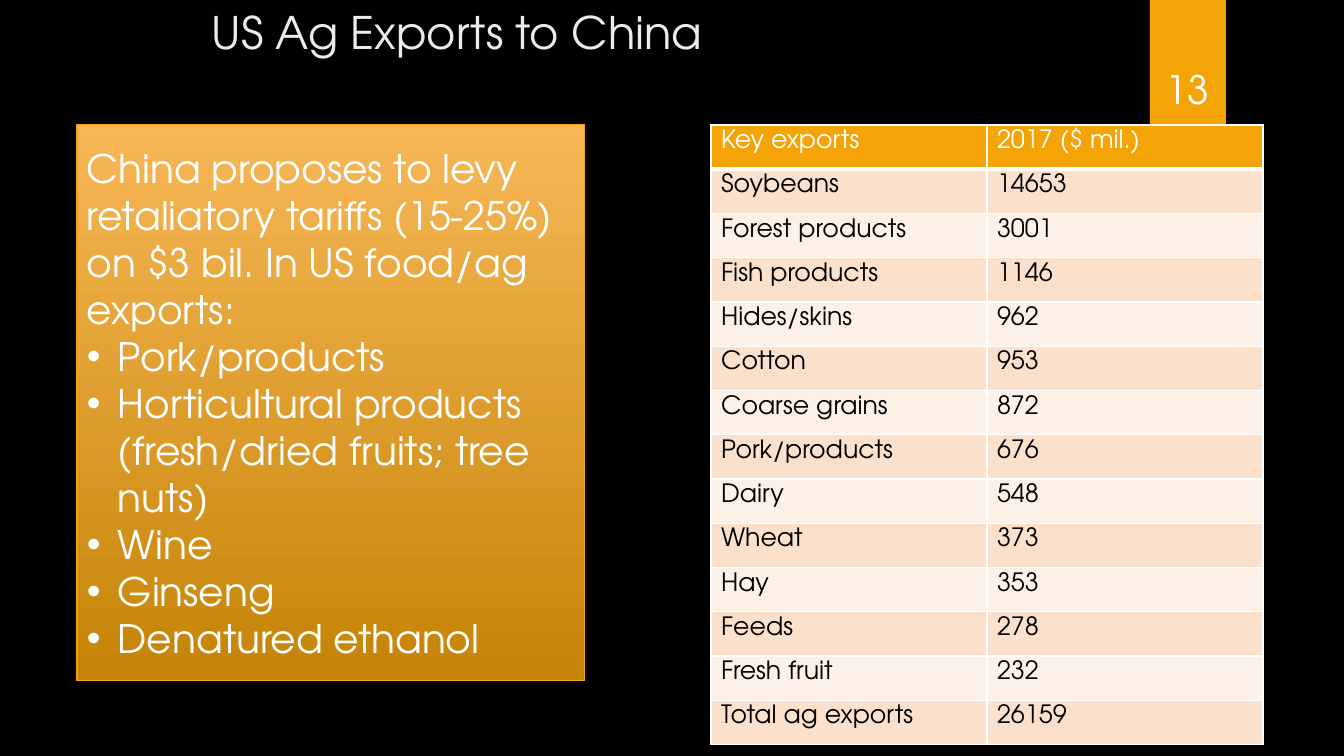
from dataclasses import dataclass

from lxml import etree
from pptx import Presentation, util as u
from pptx.dml.color import RGBColor
from pptx.enum import shapes, text
from pptx.oxml.ns import qn

TITLE = "US Ag Exports to China"
PAGE = "13"
TARIFF_INTRO = ("China proposes to levy retaliatory tariffs (15-25%) on $3 bil. "
                "In US food/ag exports:")
TARIFF_GOODS = [
    "Pork/products",
    "Horticultural products (fresh/dried fruits; tree nuts)",
    "Wine",
    "Ginseng",
    "Denatured ethanol",
]
EXPORTS = [
    ("Key exports", "2017 ($ mil.)"),
    ("Soybeans", "14653"),
    ("Forest products", "3001"),
    ("Fish products", "1146"),
    ("Hides/skins", "962"),
    ("Cotton", "953"),
    ("Coarse grains", "872"),
    ("Pork/products", "676"),
    ("Dairy", "548"),
    ("Wheat", "373"),
    ("Hay", "353"),
    ("Feeds", "278"),
    ("Fresh fruit", "232"),
    ("Total ag exports", "26159"),
]

# left, top, width, height in px
TITLE_BOX = (202, 0, 907, 53)
PAGE_TAB = (1150, 0, 76, 125)
PAGE_BOX = (1141, 32, 93, 85)
TARIFF_BOX = (77, 125, 508, 556)
EXPORT_TABLE = (711, 125, 552, 620)
BULLET_INDENT = 31


@dataclass(frozen=True)
class Theme:
    font: str = "TeX Gyre Adventor"
    background: str = "000000"
    title: str = "EBEBEB"
    light: str = "FFFFFF"
    dark: str = "000000"
    accent: str = "F5A408"
    gradient: tuple = ("F7B756", "C58406")
    bands: tuple = ("FDF0E7", "FBE0CC")
    title_size: int = 32
    body_size: int = 28
    table_size: int = 18


THEME = Theme()


def px(length):
    return round(length * 914400 / 100.8)


def place(box):
    return [px(length) for length in box]


def rgb(code):
    return RGBColor.from_string(code)


def add_run(paragraph, words, size, color):
    run = paragraph.add_run()
    run.text = words
    run.font.name = THEME.font
    run.font.size = u.Pt(size)
    run.font.color.rgb = rgb(color)


def add_label(slide, box, words, size, color, anchor, align):
    frame = slide.shapes.add_textbox(*place(box)).text_frame
    frame.word_wrap = True
    frame.vertical_anchor = anchor
    frame.paragraphs[0].alignment = align
    add_run(frame.paragraphs[0], words, size, color)


def add_box(slide, box):
    rectangle = slide.shapes.add_shape(shapes.MSO_SHAPE.RECTANGLE, *place(box))
    rectangle.shadow.inherit = False
    return rectangle


def add_bullet(paragraph):
    props = paragraph._p.get_or_add_pPr()
    props.set("marL", str(px(BULLET_INDENT)))
    props.set("indent", str(-px(BULLET_INDENT)))
    etree.SubElement(props, qn("a:buFont")).set("typeface", "Arial")
    etree.SubElement(props, qn("a:buChar")).set("char", "•")


def add_tariffs(slide):
    panel = add_box(slide, TARIFF_BOX)
    panel.fill.gradient()
    panel.fill.gradient_angle = 270
    for stop, color in zip(panel.fill.gradient_stops, THEME.gradient):
        stop.color.rgb = rgb(color)
    panel.line.color.rgb = rgb(THEME.accent)
    panel.line.width = u.Pt(0.75)

    frame = panel.text_frame
    frame.word_wrap = True
    frame.vertical_anchor = text.MSO_ANCHOR.MIDDLE
    for index, words in enumerate([TARIFF_INTRO] + TARIFF_GOODS):
        paragraph = frame.add_paragraph() if index else frame.paragraphs[0]
        paragraph.alignment = text.PP_ALIGN.LEFT
        if index:
            add_bullet(paragraph)
        add_run(paragraph, words, THEME.body_size, THEME.light)


def set_borders(cell, below):
    """Draw white cell edges of 1 point, with the bottom one below points wide."""
    props = cell._tc.get_or_add_tcPr()
    edges = {"a:lnL": 1, "a:lnR": 1, "a:lnT": 1, "a:lnB": below}
    for index, (edge, width) in enumerate(edges.items()):
        line = etree.Element(qn(edge), w=str(u.Pt(width)))
        fill = etree.SubElement(line, qn("a:solidFill"))
        etree.SubElement(fill, qn("a:srgbClr")).set("val", THEME.light)
        props.insert(index, line)


def add_exports(slide):
    row_count, column_count = len(EXPORTS), len(EXPORTS[0])
    table = slide.shapes.add_table(row_count, column_count, *place(EXPORT_TABLE)).table
    for column in table.columns:
        column.width = px(EXPORT_TABLE[2] / column_count)
    for r, export in enumerate(EXPORTS):
        table.rows[r].height = px(EXPORT_TABLE[3] / row_count)
        for c, words in enumerate(export):
            cell = table.cell(r, c)
            cell.vertical_anchor = text.MSO_ANCHOR.TOP
            cell.fill.solid()
            cell.fill.fore_color.rgb = rgb(THEME.bands[r % 2] if r else THEME.accent)
            set_borders(cell, below=1 if r else 3)
            add_run(cell.text_frame.paragraphs[0], words, THEME.table_size,
                    THEME.dark if r else THEME.light)


def main():
    deck = Presentation()
    deck.slide_width, deck.slide_height = px(1344), px(756)
    slide = deck.slides.add_slide(deck.slide_layouts[6])
    slide.background.fill.solid()
    slide.background.fill.fore_color.rgb = rgb(THEME.background)

    tab = add_box(slide, PAGE_TAB)
    tab.fill.solid()
    tab.fill.fore_color.rgb = rgb(THEME.accent)
    tab.line.fill.background()

    add_label(slide, TITLE_BOX, TITLE, THEME.title_size, THEME.title,
              text.MSO_ANCHOR.TOP, text.PP_ALIGN.LEFT)
    add_exports(slide)
    add_label(slide, PAGE_BOX, PAGE, THEME.body_size, THEME.light,
              text.MSO_ANCHOR.BOTTOM, text.PP_ALIGN.CENTER)
    add_tariffs(slide)
    deck.save("out.pptx")


if __name__ == "__main__":
    main()
